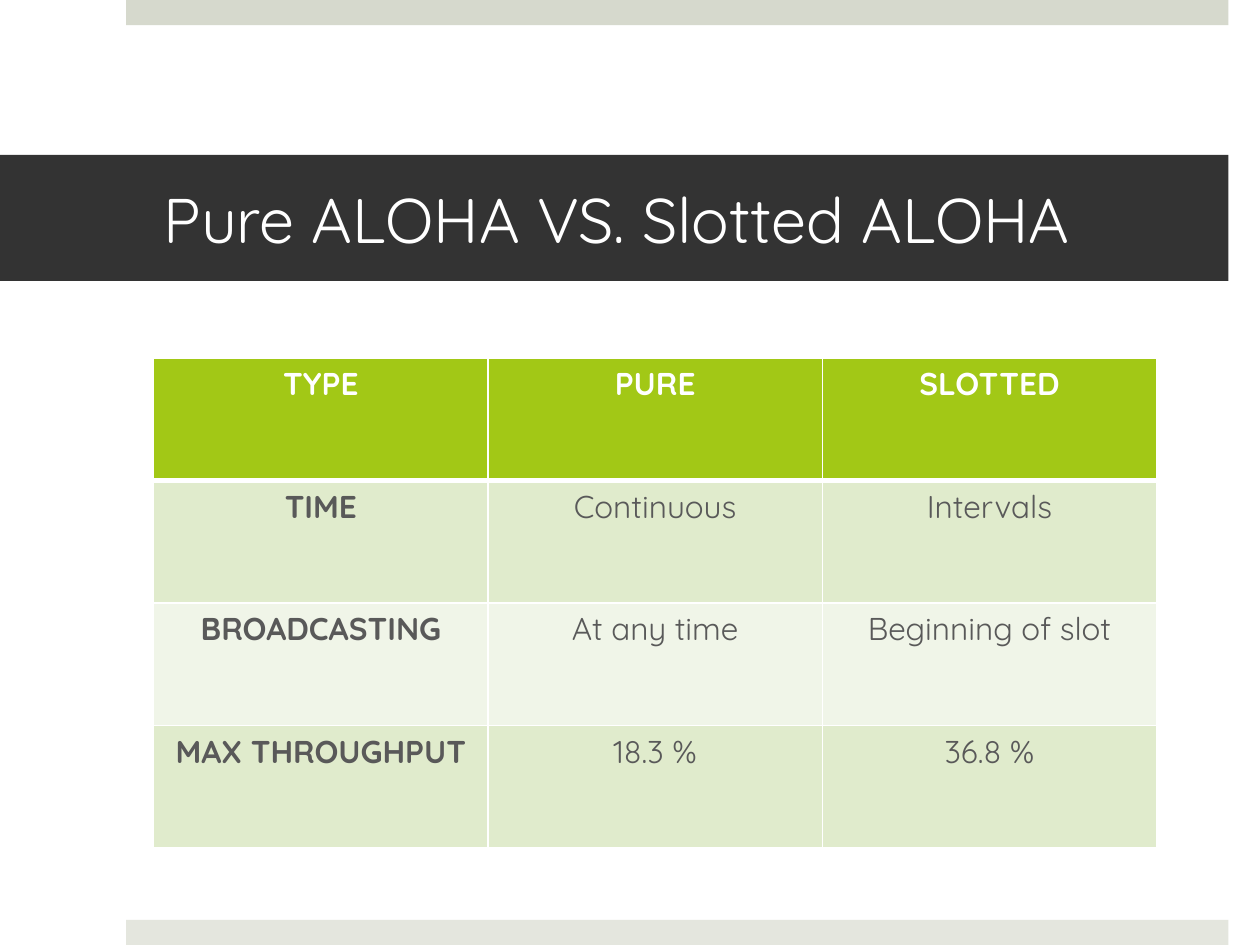
from dataclasses import dataclass

from lxml.etree import SubElement
from pptx import Presentation
from pptx.dml.color import RGBColor
from pptx.enum.shapes import MSO_SHAPE
from pptx.enum.text import MSO_ANCHOR, PP_ALIGN
from pptx.oxml.ns import qn
from pptx.util import Inches, Pt


@dataclass(frozen=True)
class Theme:
    font: str = "Quicksand"
    title_size: int = 36
    cell_size: int = 18
    white: str = "FFFFFF"
    text: str = "595959"
    title_bar: str = "333333"
    top_strip: str = "D6D9CD"
    bottom_strip: str = "E4E6DE"
    header: str = "A2C816"
    bands: tuple = ("E0EBCC", "F0F5E8")


THEME = Theme()

ROWS = [
    ["TYPE", "PURE", "SLOTTED"],
    ["TIME", "Continuous", "Intervals"],
    ["BROADCASTING", "At any time", "Beginning of slot"],
    ["MAX THROUGHPUT", "18.3 %", "36.8 %"],
]


def style_run(r, size, color, bold=False):
    r.font.name = THEME.font
    r.font.size = Pt(size)
    r.font.bold = bold
    r.font.color.rgb = RGBColor.from_string(color)


def add_bar(s, box, color):
    sp = s.shapes.add_shape(MSO_SHAPE.RECTANGLE, *map(Inches, box))
    sp.shadow.inherit = False
    sp.fill.solid()
    sp.fill.fore_color.rgb = RGBColor.from_string(color)
    sp.line.fill.background()
    return sp


def add_title(s, box, text):
    tf = add_bar(s, box, THEME.title_bar).text_frame
    tf.word_wrap = True
    tf.vertical_anchor = MSO_ANCHOR.MIDDLE
    tf.margin_left, tf.margin_right = Inches(1.3), Inches(0.3)
    tf.text = text
    p = tf.paragraphs[0]
    p.alignment = PP_ALIGN.LEFT
    style_run(p.runs[0], THEME.title_size, THEME.white)


def set_borders(cell, widths):
    # Border lines must precede the fill in the cell properties
    tc_pr = cell._tc.get_or_add_tcPr()
    for side, width in widths.items():
        ln = SubElement(tc_pr, qn(f"a:ln{side}"), w=str(Pt(width)))
        fill = SubElement(ln, qn("a:solidFill"))
        SubElement(fill, qn("a:srgbClr"), val=THEME.white)


def add_comparison(s, box, rows):
    x, y, w, h = map(Inches, box)
    table = s.shapes.add_table(len(rows), len(rows[0]), x, y, w, h).table
    for i, row in enumerate(rows):
        is_header = i == 0
        fill = THEME.header if is_header else THEME.bands[(i - 1) % 2]
        color = THEME.white if is_header else THEME.text
        for j, text in enumerate(row):
            cell = table.cell(i, j)
            set_borders(cell, {"L": 1, "R": 1, "T": 3 if i == 1 else 1,
                               "B": 3 if is_header else 1})
            cell.fill.solid()
            cell.fill.fore_color.rgb = RGBColor.from_string(fill)
            cell.text_frame.text = text
            p = cell.text_frame.paragraphs[0]
            p.alignment = PP_ALIGN.CENTER
            style_run(p.runs[0], THEME.cell_size, color, is_header or j == 0)


def main():
    prs = Presentation()
    prs.slide_width, prs.slide_height = Inches(10), Inches(7.5)
    s = prs.slides.add_slide(prs.slide_layouts[6])

    # Edge strips
    add_bar(s, (1, 0, 8.75, 0.2), THEME.top_strip)
    add_bar(s, (1, 7.3, 8.75, 0.2), THEME.bottom_strip)

    # Title and comparison table
    add_title(s, (0, 1.23, 9.75, 1), "Pure ALOHA VS. Slotted ALOHA")
    add_comparison(s, (1.22, 2.84, 7.96, 3.89), ROWS)

    prs.save("out.pptx")


if __name__ == "__main__":
    main()
